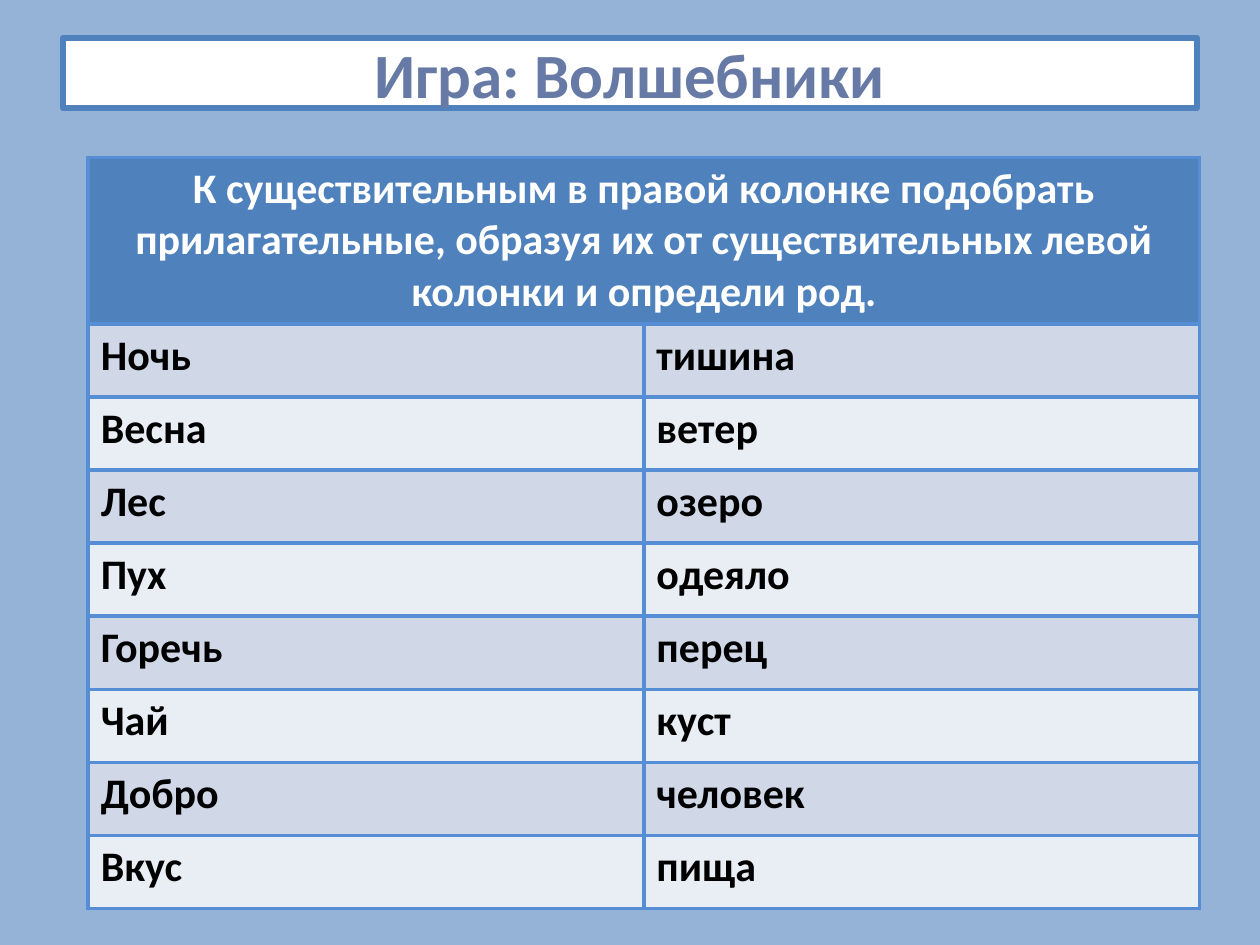
from lxml import etree
from pptx import Presentation
from pptx.dml.color import RGBColor
from pptx.enum import shapes, text
from pptx.oxml.ns import qn
from pptx.util import Inches, Pt

TITLE = "Игра: Волшебники"
TASK = ("К существительным в правой колонке подобрать прилагательные, "
        "образуя их от существительных левой колонки и определи род.")
PAIRS = [
    ("Ночь", "тишина"),
    ("Весна", "ветер"),
    ("Лес", "озеро"),
    ("Пух", "одеяло"),
    ("Горечь", "перец"),
    ("Чай", "куст"),
    ("Добро", "человек"),
    ("Вкус", "пища"),
]
BLUE, WHITE, BLACK, BORDER = "4F81BD", "FFFFFF", "000000", "558ED5"
BANDS = ("D0D8E8", "E9EDF4")
HEADER_H, ROW_H, COL_W = 1.32, 0.58, 4.41


def rgb(value):
    return RGBColor.from_string(value)


def paint(fill, color):
    fill.solid()
    fill.fore_color.rgb = rgb(color)


def style_font(font, size, color):
    font.name, font.size, font.bold = "Calibri", Pt(size), True
    font.color.rgb = rgb(color)


def make_line(tag, points, color):
    ln = etree.Element(qn(tag), w=str(Pt(points)))
    fill = etree.SubElement(ln, qn("a:solidFill"))
    etree.SubElement(fill, qn("a:srgbClr"), val=color)
    return ln


def fill_cell(cell, words, fill, color, align):
    tc_pr = cell._tc.get_or_add_tcPr()
    for side in "LRTB":
        tc_pr.append(make_line(f"a:ln{side}", 2.25, BORDER))
    paint(cell.fill, fill)
    p = cell.text_frame.paragraphs[0]
    p.alignment = align
    r = p.add_run()
    r.text = words
    style_font(r.font, 24, color)


prs = Presentation()
prs.slide_width, prs.slide_height = Inches(10), Inches(7.5)
s = prs.slides.add_slide(prs.slide_layouts[6])
paint(s.background.fill, "95B3D7")

sp = s.shapes.add_shape(shapes.MSO_SHAPE.RECTANGLE,
                        Inches(0.5), Inches(0.3), Inches(9), Inches(0.56))
sp.shadow.inherit = False
paint(sp.fill, WHITE)
sp.line.color.rgb, sp.line.width = rgb(BLUE), Pt(3.15)
tf = sp.text_frame
tf.word_wrap = True
tf.vertical_anchor = text.MSO_ANCHOR.MIDDLE
p = tf.paragraphs[0]
p.alignment = text.PP_ALIGN.CENTER
r = p.add_run()
r.text = TITLE
style_font(r.font, 36, "677AA5")
r._r.get_or_add_rPr().insert(0, make_line("a:ln", 1, "F2EEDD"))

table = s.shapes.add_table(
    len(PAIRS) + 1, 2, Inches(0.7), Inches(1.25),
    Inches(2 * COL_W), Inches(HEADER_H + ROW_H * len(PAIRS))).table
for col in table.columns:
    col.width = Inches(COL_W)
for i, row in enumerate(table.rows):
    row.height = Inches(ROW_H if i else HEADER_H)

table.cell(0, 0).merge(table.cell(0, 1))
for col, words in enumerate((TASK, "")):
    fill_cell(table.cell(0, col), words, BLUE, WHITE, text.PP_ALIGN.CENTER)
for i, pair in enumerate(PAIRS):
    for col, word in enumerate(pair):
        fill_cell(table.cell(i + 1, col), word, BANDS[i % 2], BLACK,
                  text.PP_ALIGN.LEFT)

prs.save("out.pptx")
